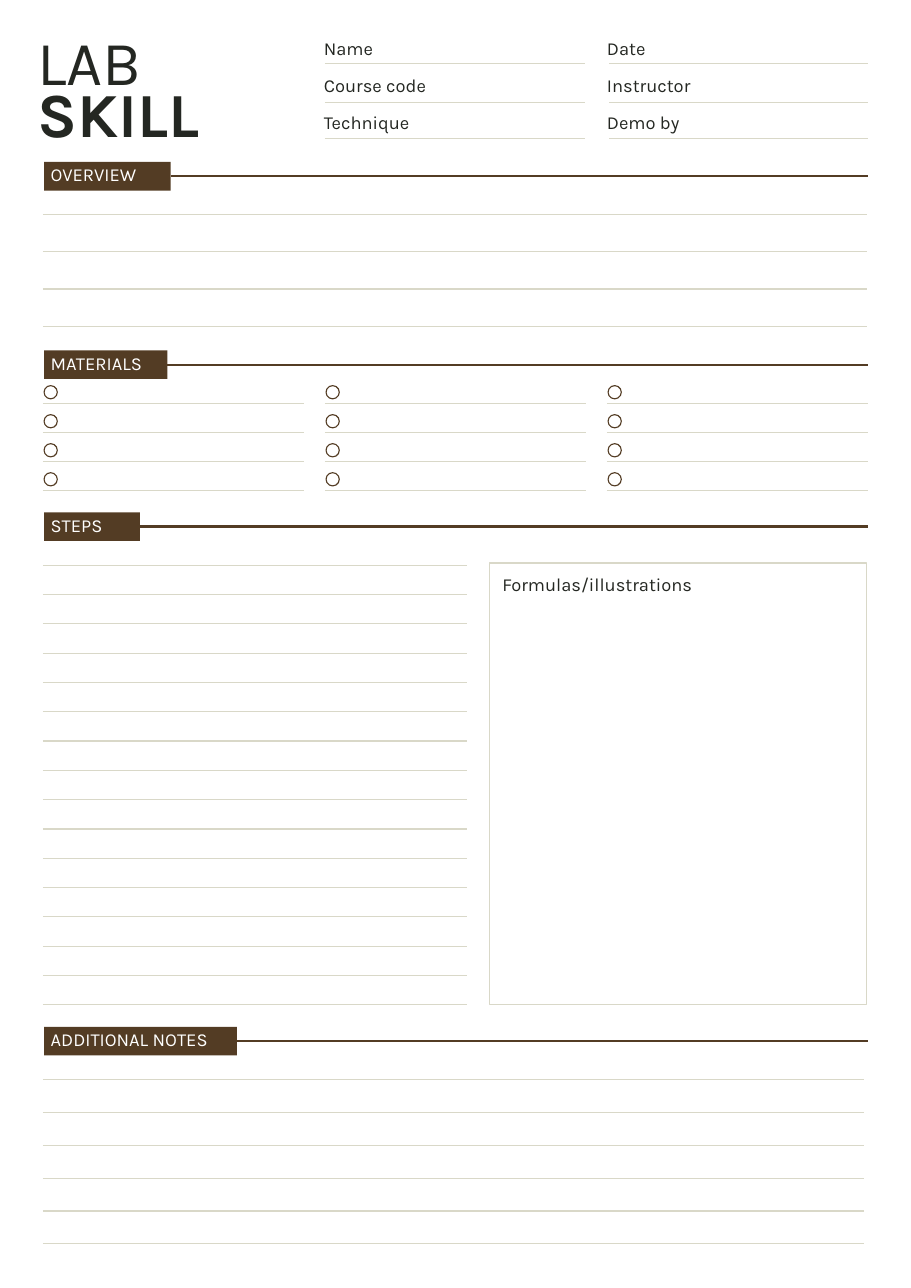
from lxml import etree
from pptx import Presentation
from pptx.dml.color import RGBColor
from pptx.enum import shapes, text
from pptx.oxml import ns
from pptx.util import Inches, Pt

COLORS = {"ink": "242722", "brown": "533C24", "rule": "D9D8C8", "white": "FFFFFF"}
FONT = "Karla"
LEFT, RIGHT = 0.39, 7.88

TITLE = [("LAB", False), ("SKILL", True)]
FIELD_ROWS = [(0.39, 0.58), (0.73, 0.93), (1.06, 1.26)]
FIELD_COLUMNS = [
    (2.94, 2.95, 5.31, ["Name", "Course code", "Technique"]),
    (5.51, 5.53, 7.88, ["Date", "Instructor", "Demo by"]),
]
SECTIONS = [
    ("OVERVIEW", 1.47, 1.15),
    ("MATERIALS", 3.18, 1.12),
    ("STEPS", 4.65, 0.87),
    ("ADDITIONAL NOTES", 9.32, 1.75),
]
MATERIAL_COLUMNS = [0.39, 2.95, 5.51]
MATERIAL_WIDTH, CIRCLE = 2.37, 0.12
RULED_AREAS = [
    (LEFT, 7.87, 1.95, 2.96, 4),
    (LEFT, 4.24, 5.13, 9.12, 16),
    (LEFT, 7.84, 9.8, 11.29, 6),
] + [(x, x + MATERIAL_WIDTH, 3.66, 4.45, 4) for x in MATERIAL_COLUMNS]
FORMULA_BOX = (4.44, 5.11, 3.43, 4.01)

prs = Presentation()
prs.slide_width, prs.slide_height = Inches(8.27), Inches(11.69)
s = prs.slides.add_slide(prs.slide_layouts[6])


def rgb(name):
    return RGBColor.from_string(COLORS[name])


def add_text(content, x, y, w, h=0.14, size=12, color="ink"):
    sp = s.shapes.add_textbox(*map(Inches, (x, y, w, h)))
    tf = sp.text_frame
    tf.word_wrap = True
    tf.auto_size = text.MSO_AUTO_SIZE.SHAPE_TO_FIT_TEXT
    tf.margin_left = tf.margin_right = tf.margin_top = tf.margin_bottom = 0
    lines = [(content, False)] if isinstance(content, str) else content
    for i, (line, bold) in enumerate(lines):
        p = tf.add_paragraph() if i else tf.paragraphs[0]
        p.line_spacing = 0.7
        r = p.add_run()
        r.text = line
        r.font.name, r.font.size, r.font.bold = FONT, Pt(size), bold
        r.font.color.rgb = rgb(color)


def add_line(x1, x2, y, color="rule", width=0.75):
    line = s.shapes.add_connector(
        shapes.MSO_CONNECTOR.STRAIGHT, Inches(x1), Inches(y), Inches(x2), Inches(y))
    line.line.color.rgb = rgb(color)
    line.line.width = Pt(width)
    etree.SubElement(line._element.spPr, ns.qn("a:effectLst"))
    return line


def add_shape(kind, x, y, w, h, fill=None, outline=None):
    sp = s.shapes.add_shape(kind, *map(Inches, (x, y, w, h)))
    sp.shadow.inherit = False
    if fill:
        sp.fill.solid()
        sp.fill.fore_color.rgb = rgb(fill)
    else:
        sp.fill.background()
    if outline:
        sp.line.color.rgb = rgb(outline)
        sp.line.width = Pt(0.75)
    else:
        sp.line.fill.background()
    return sp


def spread(first, last, count):
    return [first + i * (last - first) / (count - 1) for i in range(count)]


add_text(TITLE, 0.34, 0.39, 2.41, 0.97, size=41)

for text_x, x1, x2, labels in FIELD_COLUMNS:
    for label, (text_y, line_y) in zip(labels, FIELD_ROWS):
        add_text(label, text_x, text_y, 2.28)
        add_line(x1, x2, line_y)

for heading, y, w in SECTIONS:
    bar = add_shape(shapes.MSO_SHAPE.RECTANGLE, 0.4, y, w, 0.26, fill="brown")
    line = add_line(0.4 + w, RIGHT, y + 0.13, color="brown", width=1.5)
    line.begin_connect(bar, 3)
    add_text(heading, 0.46, y + 0.07, 1.68, color="white")

for x1, x2, first, last, count in RULED_AREAS:
    for y in spread(first, last, count):
        add_line(x1, x2, y)

for x in MATERIAL_COLUMNS:
    for y in spread(3.5, 4.29, 4):
        add_shape(shapes.MSO_SHAPE.OVAL, x + 0.01, y, CIRCLE, CIRCLE, outline="brown")

add_shape(shapes.MSO_SHAPE.RECTANGLE, *FORMULA_BOX, outline="rule")
add_text("Formulas/illustrations", 4.56, 5.26, 2.06)

prs.save("out.pptx")
